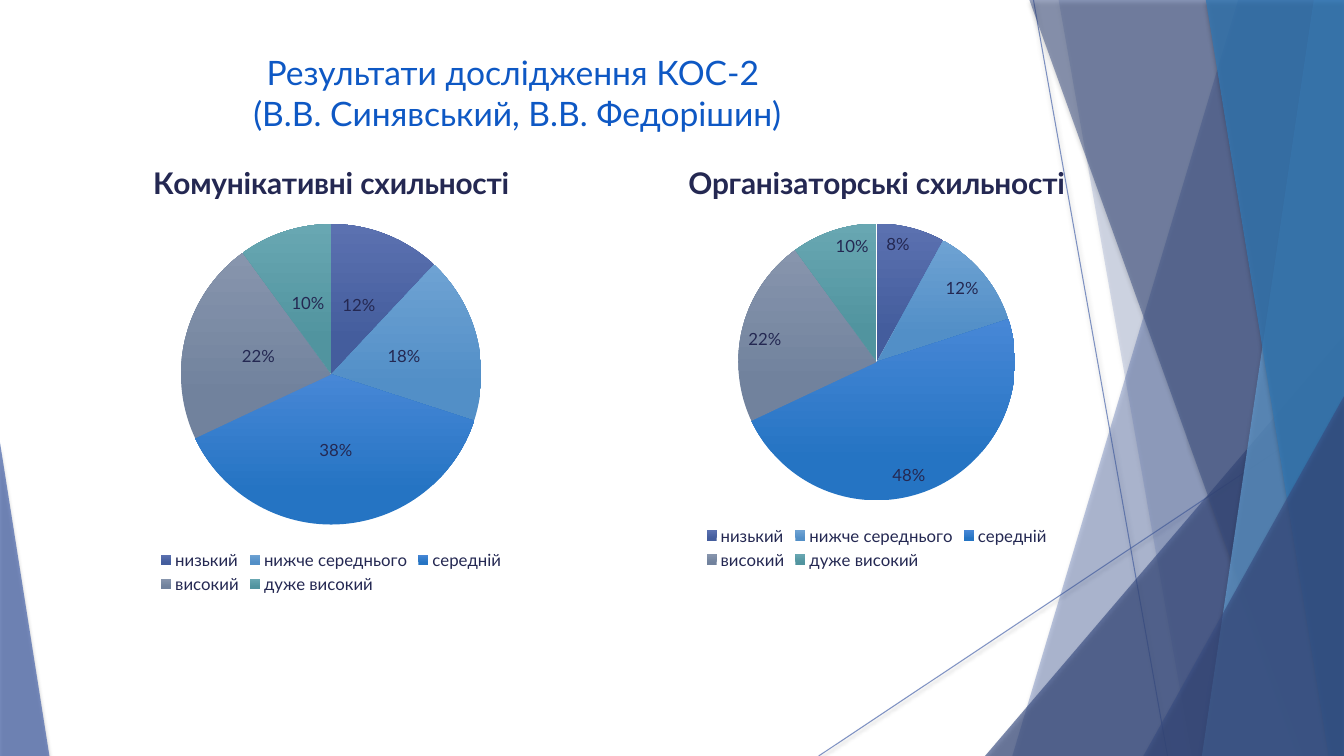
from lxml.etree import SubElement
from pptx import Presentation
from pptx.chart.data import CategoryChartData
from pptx.dml.color import RGBColor
from pptx.enum.chart import XL_CHART_TYPE as ChartType
from pptx.enum.chart import XL_LABEL_POSITION as LabelPosition
from pptx.enum.chart import XL_LEGEND_POSITION as LegendPosition
from pptx.enum.shapes import MSO_CONNECTOR as Connector
from pptx.enum.shapes import MSO_SHAPE as Shape
from pptx.enum.text import MSO_ANCHOR as Anchor
from pptx.enum.text import PP_ALIGN as Align
from pptx.oxml.ns import qn
from pptx.util import Inches, Pt

WIDTH, HEIGHT = 13.33, 7.5
FONT = "Lato"
INDIGO = RGBColor(0x4A, 0x66, 0xAC)
NAVY = RGBColor(0x38, 0x4C, 0x81)
SKY = RGBColor(0x62, 0x9D, 0xD1)
BLUE = RGBColor(0x34, 0x77, 0xB2)
TITLE_BLUE = RGBColor(0x0E, 0x58, 0xC4)
INK = RGBColor(0x24, 0x28, 0x52)
BLACK = RGBColor(0, 0, 0)

# Answer level with the dark and light ends of its slice gradient
LEVELS = [
    ("низький", RGBColor(0x44, 0x5D, 0x9D), RGBColor(0x5B, 0x71, 0xB0)),
    ("нижче середнього", RGBColor(0x52, 0x8F, 0xC7), RGBColor(0x6E, 0xA2, 0xD3)),
    ("середній", RGBColor(0x25, 0x74, 0xC3), RGBColor(0x47, 0x87, 0xD6)),
    ("високий", RGBColor(0x71, 0x82, 0x9D), RGBColor(0x87, 0x95, 0xAD)),
    ("дуже високий", RGBColor(0x51, 0x94, 0x9F), RGBColor(0x68, 0xA7, 0xB2)),
]


def set_alpha(color, percent):
    SubElement(color, qn("a:alpha"), val=str(percent * 1000))


def add_effects(shape, opacity, shadow_opacity, blur, distance):
    """Make the shape's colour translucent and drop a soft shadow below it."""
    properties = shape.element.spPr
    for color in properties.iter(qn("a:srgbClr")):
        set_alpha(color, opacity)
    effects = properties.find(qn("a:effectLst"))
    if effects is None:
        effects = SubElement(properties, qn("a:effectLst"))
    shadow = SubElement(effects, qn("a:outerShdw"), blurRad=str(Pt(blur)),
                        dist=str(Pt(distance)), dir="5400000", rotWithShape="0")
    set_alpha(SubElement(shadow, qn("a:srgbClr"), val="000000"), shadow_opacity)


def paint_facet(shape, color, opacity):
    shape.fill.solid()
    shape.fill.fore_color.rgb = color
    shape.line.fill.background()
    shape.shadow.inherit = False
    add_effects(shape, opacity, 35, 3, 2)


def add_thin_line(page, start, end):
    line = page.shapes.add_connector(
        Connector.STRAIGHT, *(Inches(value) for value in start + end))
    line.line.color.rgb = INDIGO
    line.line.width = Pt(0.75)
    add_effects(line, 70, 38, 3.1, 1.6)


def add_band(page, top_left, bottom_left, color, opacity):
    """Full-height band between a slanted left edge and the right slide edge."""
    corners = [(top_left, 0), (WIDTH, 0), (WIDTH, HEIGHT), (bottom_left, HEIGHT)]
    points = [(Inches(x), Inches(y)) for x, y in corners]
    builder = page.shapes.build_freeform(*points[0])
    builder.add_line_segments(points[1:], close=True)
    paint_facet(builder.convert_to_shape(), color, opacity)


def add_corner(page, left, width, height, tip, color, opacity):
    """Triangle that stands on the bottom edge, with its tip at 0 or 1."""
    corner = page.shapes.add_shape(
        Shape.ISOSCELES_TRIANGLE, Inches(left), Inches(HEIGHT - height),
        Inches(width), Inches(height))
    corner.adjustments[0] = tip
    paint_facet(corner, color, opacity)


def add_backdrop(page):
    add_thin_line(page, (10.25, 0), (11.58, HEIGHT))
    add_thin_line(page, (WIDTH, 4.03), (8.12, HEIGHT))
    add_band(page, 12.28, 10.04, INDIGO, 36)
    add_band(page, 10.5, 11.82, INDIGO, 20)
    add_corner(page, 9.77, 3.56, 4.17, 1, NAVY, 66)
    add_band(page, 10.21, 12.91, NAVY, 50)
    add_band(page, 13.03, 11.92, SKY, 70)
    add_band(page, 11.96, 13.18, BLUE, 80)
    add_corner(page, 11.34, 1.99, 3.57, 1, NAVY, 66)
    add_corner(page, 0, 0.49, 3.11, 0, INDIGO, 70)


def set_font(font, size, color):
    font.name = FONT
    font.size = Pt(size)
    font.color.rgb = color


def add_title(page, left, top, width, height):
    box = page.shapes.add_textbox(
        Inches(left), Inches(top), Inches(width), Inches(height))
    frame = box.text_frame
    frame.word_wrap = True
    frame.vertical_anchor = Anchor.TOP
    frame.margin_left = frame.margin_right = 0
    frame.margin_top = frame.margin_bottom = 0
    para = frame.paragraphs[0]
    para.alignment = Align.CENTER
    lines = ["Результати дослідження КОС-2 ", "(В.В. Синявський, В.В. Федорішин)"]
    for index, text in enumerate(lines):
        if index:
            para.add_line_break()
        span = para.add_run()
        span.text = text
        set_font(span.font, 24, TITLE_BLUE)


def add_pie(page, left, top, width, height, title, values, label_position):
    data = CategoryChartData()
    data.categories = [name for name, _, _ in LEVELS]
    data.add_series(title, values)
    chart = page.shapes.add_chart(
        ChartType.PIE, Inches(left), Inches(top), Inches(width), Inches(height),
        data).chart
    chart.font.name = "Arial"
    chart.font.size = Pt(10)
    chart.font.color.rgb = BLACK

    # Heading and legend
    chart.has_title = True
    span = chart.chart_title.text_frame.paragraphs[0].add_run()
    span.text = title
    set_font(span.font, 21.3, INK)
    span.font.bold = True
    chart.has_legend = True
    chart.legend.position = LegendPosition.BOTTOM
    chart.legend.include_in_layout = False
    set_font(chart.legend.font, 12, INK)

    # Slices, dark at the bottom
    plot = chart.plots[0]
    plot.vary_by_categories = True
    for index, (_, dark, light) in enumerate(LEVELS):
        fill = plot.series[0].points[index].format.fill
        fill.gradient()
        fill.gradient_angle = 90
        for stop, color, position in zip(fill.gradient_stops, (dark, light), (0.22, 1)):
            stop.color.rgb = color
            stop.position = position

    # Percentages
    plot.has_data_labels = True
    labels = plot.data_labels
    labels.show_percentage = True
    labels.show_value = False
    labels.number_format = "0%"
    labels.number_format_is_linked = False
    labels.position = label_position
    set_font(labels.font, 12, INK)


def main():
    deck = Presentation()
    deck.slide_width, deck.slide_height = Inches(WIDTH), Inches(HEIGHT)
    page = deck.slides.add_slide(deck.slide_layouts[6])
    add_backdrop(page)
    add_title(page, 0.43, 0.52, 9.4, 6.57)
    add_pie(page, 0.6, 1.41, 5.37, 4.52, "Комунікативні схильності",
            (12, 18, 38, 22, 10), LabelPosition.CENTER)
    add_pie(page, 5.6, 1.41, 6.19, 4.28, "Організаторські схильності",
            (8, 12, 48, 22, 10), LabelPosition.INSIDE_END)
    deck.save("out.pptx")


if __name__ == "__main__":
    main()
